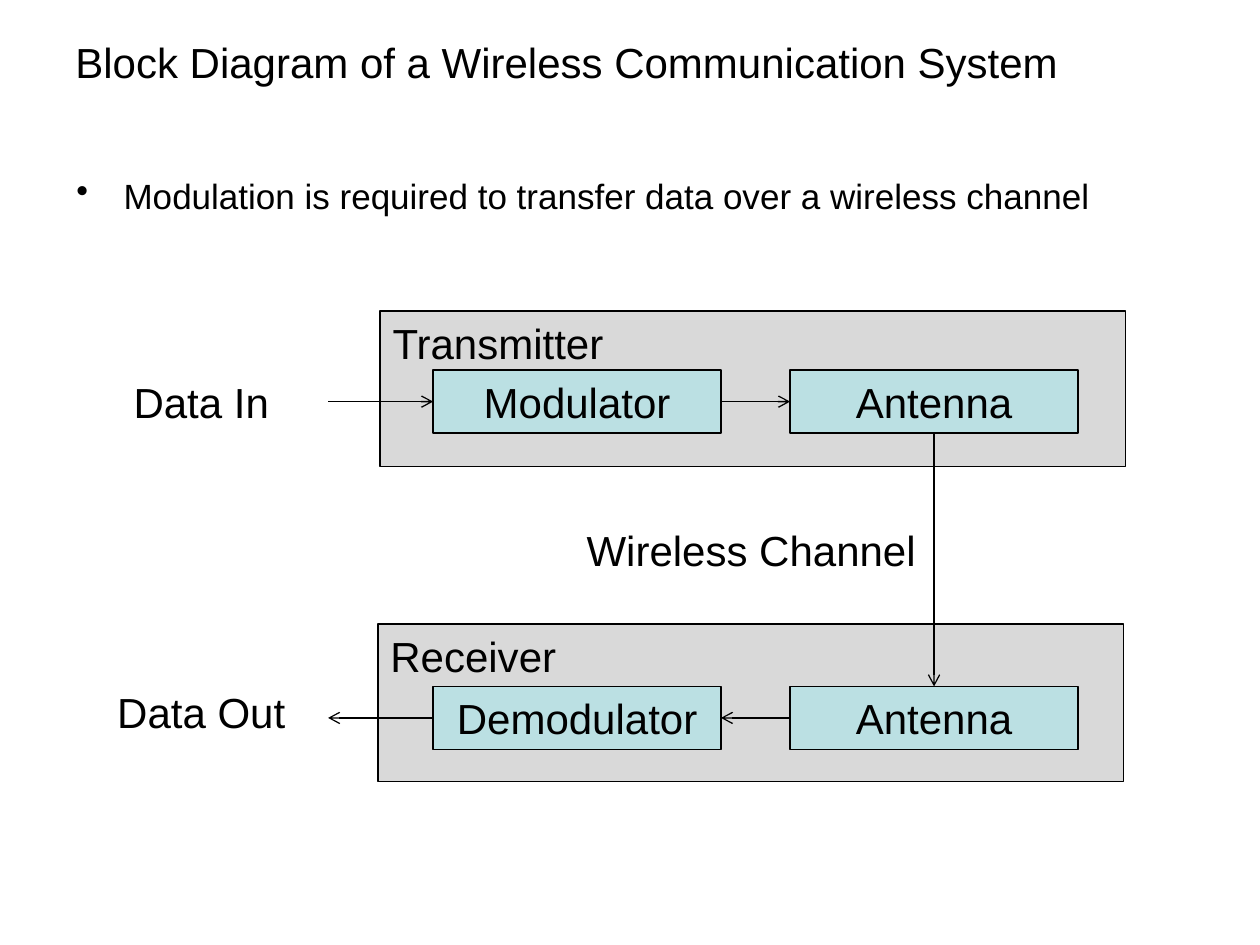
from lxml.etree import SubElement
from pptx import Presentation
from pptx.dml.color import RGBColor
from pptx.enum.shapes import MSO_CONNECTOR, MSO_SHAPE
from pptx.enum.text import MSO_ANCHOR, PP_ALIGN
from pptx.oxml.ns import qn
from pptx.util import Pt

TITLE = "Block Diagram of a Wireless Communication System"
BULLET = "Modulation is required to transfer data over a wireless channel"
CHANNEL = "Wireless Channel"
BLACK, PANEL_FILL, BLOCK_FILL = "000000", "D9D9D9", "BBE0E3"

BLOCK_LEFTS = (247.5, 451.5)
BLOCK_WIDTH, BLOCK_HEIGHT = 164.5, 36
LABEL_LEFT, LABEL_WIDTH = 42.5, 145
PANEL_WIDTH = 426

ROWS = [
    {"panel": ("Receiver", 216, 356.5, 90), "label": ("Data Out", 389),
     "blocks": ("Demodulator", "Antenna"), "top": 392.25, "inward": False},
    {"panel": ("Transmitter", 217.25, 177.75, 88.75), "label": ("Data In", 211.5),
     "blocks": ("Modulator", "Antenna"), "top": 211.5, "inward": True},
]


def color(value):
    return RGBColor.from_string(value)


def write(shape, text, size=24, align=PP_ALIGN.LEFT, anchor=MSO_ANCHOR.TOP, wrap=True):
    frame = shape.text_frame
    frame.word_wrap = wrap
    frame.vertical_anchor = anchor
    paragraph = frame.paragraphs[0]
    paragraph.text = text
    paragraph.alignment = align
    paragraph.font.name = "Arial"
    paragraph.font.size = Pt(size)
    paragraph.font.color.rgb = color(BLACK)


def add_text(slide, text, left, top, width, height, **style):
    box = slide.shapes.add_textbox(Pt(left), Pt(top), Pt(width), Pt(height))
    write(box, text, **style)


def add_bullet(slide, text, left, top, width, height):
    box = slide.shapes.add_textbox(Pt(left), Pt(top), Pt(width), Pt(height))
    properties = box.text_frame.paragraphs[0]._p.get_or_add_pPr()
    properties.set("marL", str(Pt(27)))
    properties.set("indent", str(Pt(-27)))
    SubElement(properties, qn("a:buChar"), char="•")
    write(box, text, size=20)


def add_box(slide, text, left, top, width, height, fill, align=PP_ALIGN.LEFT):
    shape = slide.shapes.add_shape(
        MSO_SHAPE.RECTANGLE, Pt(left), Pt(top), Pt(width), Pt(height))
    shape.shadow.inherit = False
    shape.fill.solid()
    shape.fill.fore_color.rgb = color(fill)
    shape.line.color.rgb = color(BLACK)
    shape.line.width = Pt(0.75)
    write(shape, text, align=align)


def add_arrow(slide, start, end):
    arrow = slide.shapes.add_connector(
        MSO_CONNECTOR.STRAIGHT, *(Pt(value) for value in (*start, *end)))
    arrow.line.color.rgb = color(BLACK)
    arrow.line.width = Pt(0.75)
    SubElement(arrow.line._get_or_add_ln(), qn("a:tailEnd"), type="arrow")
    SubElement(arrow._element.spPr, qn("a:effectLst"))


def main():
    presentation = Presentation()
    presentation.slide_width, presentation.slide_height = Pt(720), Pt(540)
    slide = presentation.slides.add_slide(presentation.slide_layouts[6])

    for row in ROWS:
        name, left, top, height = row["panel"]
        add_box(slide, name, left, top, PANEL_WIDTH, height, PANEL_FILL)

    add_text(slide, TITLE, 36, 16, 648, 39, anchor=MSO_ANCHOR.MIDDLE)
    add_bullet(slide, BULLET, 36.5, 96, 646.5, 390)

    first_block, second_block = BLOCK_LEFTS
    spans = [(LABEL_LEFT + LABEL_WIDTH, first_block),
             (first_block + BLOCK_WIDTH, second_block)]
    for row in ROWS:
        label, label_top = row["label"]
        add_text(slide, label, LABEL_LEFT, label_top, LABEL_WIDTH, BLOCK_HEIGHT,
                 align=PP_ALIGN.CENTER)
        for name, left in zip(row["blocks"], BLOCK_LEFTS):
            add_box(slide, name, left, row["top"], BLOCK_WIDTH, BLOCK_HEIGHT,
                    BLOCK_FILL, PP_ALIGN.CENTER)
        middle = row["top"] + BLOCK_HEIGHT / 2
        for span in spans:
            start, end = span if row["inward"] else reversed(span)
            add_arrow(slide, (start, middle), (end, middle))

    receiver, transmitter = ROWS
    antenna_center = second_block + BLOCK_WIDTH / 2
    add_arrow(slide, (antenna_center, transmitter["top"] + BLOCK_HEIGHT),
              (antenna_center, receiver["top"]))
    add_text(slide, CHANNEL, 327, 296, 204.5, 36, align=PP_ALIGN.CENTER, wrap=False)

    presentation.save("out.pptx")


if __name__ == "__main__":
    main()
